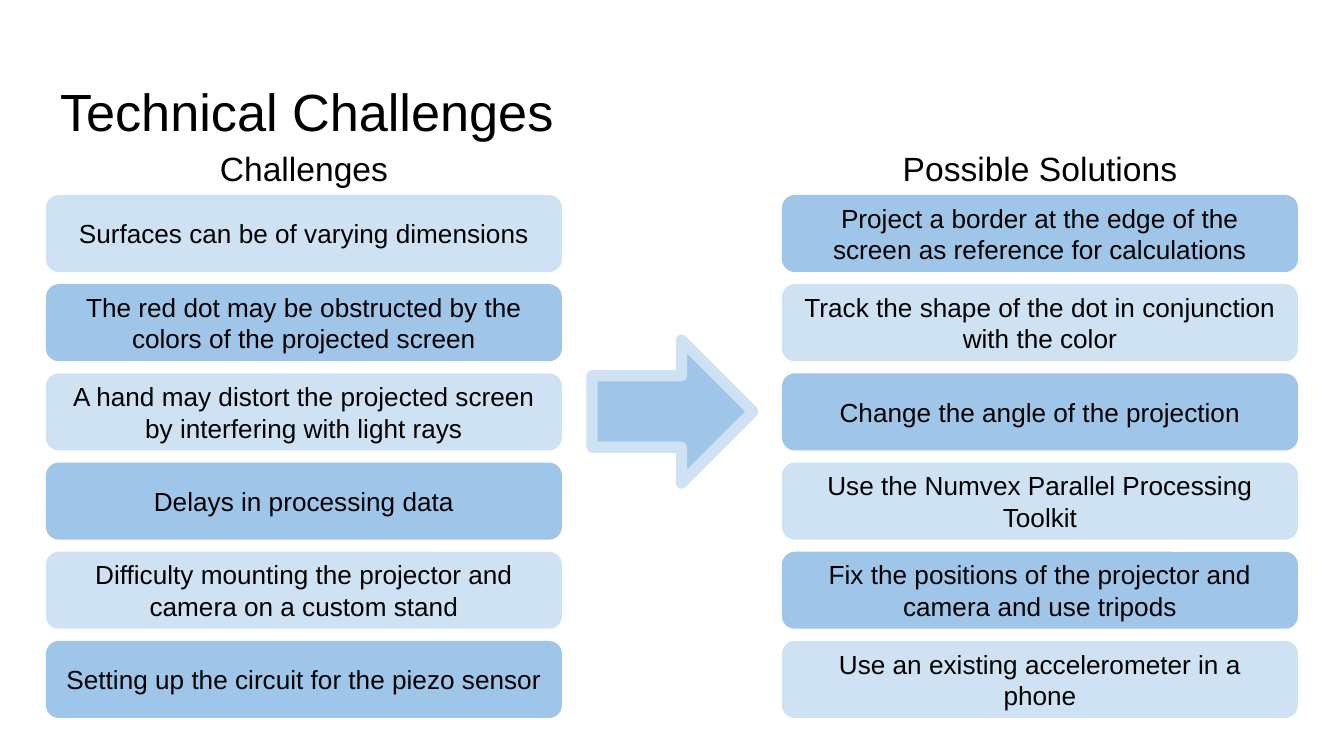
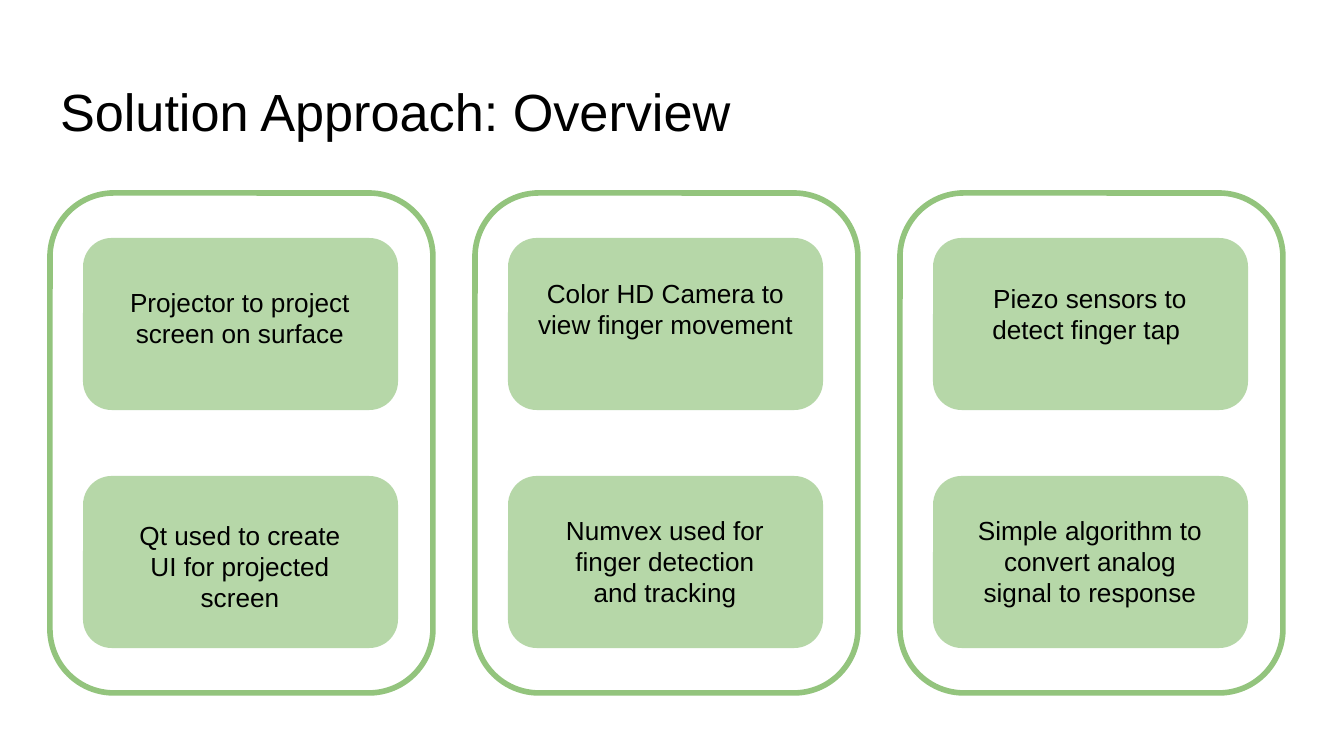
from pptx import Presentation
from pptx.dml.color import RGBColor
from pptx.enum.shapes import MSO_SHAPE as Shape
from pptx.enum.text import MSO_ANCHOR as Anchor, MSO_AUTO_SIZE as AutoSize, PP_ALIGN as Align
from pptx.util import Emu, Pt

# Content
CHALLENGES_TITLE = "Technical Challenges"
COLUMNS = [  # heading, heading width, left edge, entries
    ("Challenges", 242, 46, [
        "Surfaces can be of varying dimensions",
        "The red dot may be obstructed by the colors of the projected screen",
        "A hand may distort the projected screen by interfering with light rays",
        "Delays in processing data",
        "Difficulty mounting the projector and camera on a custom stand",
        "Setting up the circuit for the piezo sensor",
    ]),
    ("Possible Solutions", 322, 782, [
        "Project a border at the edge of the screen as reference for calculations",
        "Track the shape of the dot in conjunction with the color",
        "Change the angle of the projection",
        "Use the Numvex Parallel Processing Toolkit",
        "Fix the positions of the projector and camera and use tripods",
        "Use an existing accelerometer in a phone",
    ]),
]

OVERVIEW_TITLE = "Solution Approach: Overview"
PANELS = [  # two cards each: text, label top, label height (None: text sits in the card)
    [("Projector to project screen on surface", 272, 85),
     ("Qt used to create UI for projected screen", 505, 113)],
    [("Color HD Camera to view finger movement", None, None),
     ("Numvex used for finger detection and tracking", 500, 110)],
    [("Piezo sensors to detect finger tap ", 268, 110),
     ("Simple algorithm to convert analog signal to response", 500, 110)],
]

# Shared style
EMU_PER_PX = 914400 / 134.4
FONT, BLACK = "Arial", "000000"
PALE_BLUE, BLUE = "CFE2F3", "9FC5E8"
PALE_GREEN, GREEN = "B6D7A8", "93C47D"
INSET = 14
CORNER = 0.167


def px(length):
    return Emu(round(length * EMU_PER_PX))


def color(code):
    return RGBColor.from_string(code)


def write(box, text, size=14, align=Align.CENTER, anchor=Anchor.MIDDLE, bottom=INSET):
    frame = box.text_frame
    frame.word_wrap = True
    frame.auto_size = AutoSize.NONE
    frame.vertical_anchor = anchor
    frame.margin_left = frame.margin_top = frame.margin_right = px(INSET)
    frame.margin_bottom = px(bottom)
    para = frame.paragraphs[0]
    para.alignment = align
    span = para.add_run()
    span.text = text
    span.font.name = FONT
    span.font.size = Pt(size)
    span.font.color.rgb = color(BLACK)


def add_box(page, kind, left, top, width, height, fill=None, line=None, weight=0):
    box = page.shapes.add_shape(kind, px(left), px(top), px(width), px(height))
    box.shadow.inherit = False
    if fill:
        box.fill.solid()
        box.fill.fore_color.rgb = color(fill)
    else:
        box.fill.background()
    if line:
        box.line.color.rgb = color(line)
        box.line.width = Pt(weight)
    else:
        box.line.fill.background()
    if kind == Shape.ROUNDED_RECTANGLE:
        box.adjustments[0] = CORNER
    return box


def add_page(deck, title):
    page = deck.slides.add_slide(deck.slide_layouts[5])
    box = page.shapes.title
    box.left, box.top, box.width, box.height = px(46), px(65), px(1253), px(85)
    write(box, title, size=28, align=Align.LEFT, anchor=Anchor.TOP)
    return page


def build_challenges(deck):
    page = add_page(deck, CHALLENGES_TITLE)
    width, height, top, rise = 516, 77, 195, 446
    for column, (heading, heading_width, left, entries) in enumerate(COLUMNS):
        # Heading centred over its column
        heading_left = left + (width - heading_width) / 2
        box = page.shapes.add_textbox(px(heading_left), px(142), px(heading_width), px(52))
        write(box, heading, size=18)
        # Entries in alternating blues
        for row, entry in enumerate(entries):
            fill = (PALE_BLUE, BLUE)[(row + column) % 2]
            y = top + rise * row / (len(entries) - 1)
            write(add_box(page, Shape.ROUNDED_RECTANGLE, left, y, width, height, fill), entry)
    add_box(page, Shape.RIGHT_ARROW, 592, 340, 161, 143, BLUE, PALE_BLUE, 6)


def build_overview(deck):
    page = add_page(deck, OVERVIEW_TITLE)
    for column, cards in enumerate(PANELS):
        left = 50 + 425 * column
        add_box(page, Shape.ROUNDED_RECTANGLE, left, 193, 383, 500, line=GREEN, weight=3)
        for row, (text, label_top, label_height) in enumerate(cards):
            card_left = left + 33
            card = add_box(page, Shape.ROUNDED_RECTANGLE, card_left, 238 + 238 * row,
                           315, 172, PALE_GREEN)
            if label_top is None:
                write(card, text, bottom=INSET + 31)
            else:
                label = add_box(page, Shape.RECTANGLE, card_left + 30, label_top,
                                254, label_height, PALE_GREEN)
                write(label, text, anchor=Anchor.TOP)


def main():
    deck = Presentation()
    deck.slide_width, deck.slide_height = px(1344), px(756)
    build_challenges(deck)
    build_overview(deck)
    deck.save("out.pptx")


if __name__ == "__main__":
    main()
